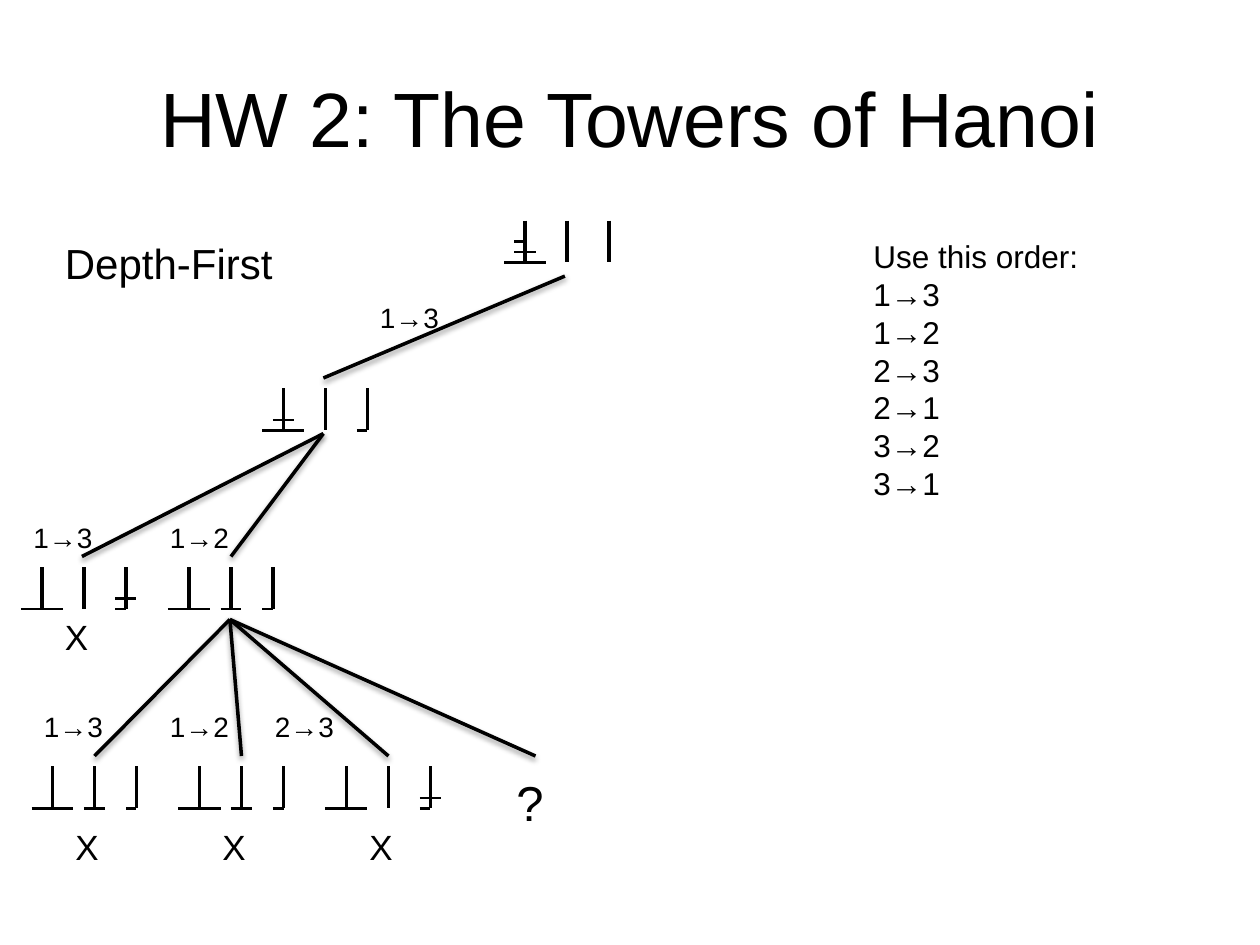
from lxml import etree
from pptx import Presentation
from pptx import util as u
from pptx.dml.color import RGBColor
from pptx.enum import shapes, text
from pptx.oxml import ns

COLORS = {"ink": "000000", "paper": "FFFFFF"}
FONT = "Arial"
UNITS_PER_INCH = 12
WIDE, MEDIUM, SMALL = (-2, 2), (-1, 1), (-1, 0)
MOVES = ["1→3", "1→2", "2→3", "2→1", "3→2", "3→1"]


def grid(units):
    """Turn grid units, twelfths of an inch, into a length."""
    return u.Cm(units * 2.54 / UNITS_PER_INCH)


def add_text(slide, box, lines, size, align=text.PP_ALIGN.LEFT, wrap=False,
             anchor=text.MSO_ANCHOR.TOP, grow=True):
    """Add a text box with one paragraph for each line."""
    frame = slide.shapes.add_textbox(*map(grid, box)).text_frame
    frame.word_wrap = wrap
    frame.vertical_anchor = anchor
    if grow:
        frame.auto_size = text.MSO_AUTO_SIZE.SHAPE_TO_FIT_TEXT
    frame.text = "\n".join(lines)
    for paragraph in frame.paragraphs:
        paragraph.alignment = align
        paragraph.font.name = FONT
        paragraph.font.size = u.Pt(size)
        paragraph.font.color.rgb = RGBColor.from_string(COLORS["ink"])


def add_line(slide, start, end, width, shadow=False):
    """Add a straight line, with a soft shadow below it if asked."""
    line = slide.shapes.add_connector(
        shapes.MSO_CONNECTOR.STRAIGHT, *map(grid, (*start, *end)))
    line.line.width = u.Pt(width)
    line.line.color.rgb = RGBColor.from_string(COLORS["ink"])
    properties = line._element.spPr
    effects = etree.SubElement(properties, ns.qn("a:effectLst"))
    if shadow:
        outer = etree.SubElement(
            effects, ns.qn("a:outerShdw"), blurRad="40000", dist="20000",
            dir="5400000", rotWithShape="0")
        color = etree.SubElement(outer, ns.qn("a:srgbClr"), val=COLORS["ink"])
        etree.SubElement(color, ns.qn("a:alpha"), val="38000")


def add_towers(slide, left, top, pegs, dead_end_drop=None):
    """Draw three pegs with their discs, and an X below a dead end."""
    height = 4
    for index, discs in enumerate(pegs):
        x = left + 2 + 4 * index
        add_line(slide, (x, top), (x, top + height), 2.25)
        for level, (begin, end) in enumerate(discs):
            y = top + height - level
            add_line(slide, (x + begin, y), (x + end, y), 1.5)
    if dead_end_drop is not None:
        box = (left + 3, top + dead_end_drop, 4.7, 5.3)
        add_text(slide, box, ["X"], 20)


def add_branches(slide, start, ends, labels):
    """Draw the branches from one state, with the moves they stand for."""
    for end in ends:
        add_line(slide, start, end, 2, shadow=True)
    for (left, top), move in labels:
        add_text(slide, (left, top, 8.2, 4.4), [move], 16)


def add_search_tree(slide, left, top):
    """Draw the depth-first search tree from its top left corner."""
    split = [[WIDE], [MEDIUM], [SMALL]]
    stacked = [[WIDE], [], [SMALL, MEDIUM]]
    states = [
        (46, 0, [[WIDE, MEDIUM, SMALL], [], []], None),
        (23, 16, [[WIDE, MEDIUM], [], [SMALL]], None),
        (0, 33, stacked, 4),
        (14, 33, split, None),
        (1, 52, split, 5),
        (15, 52, split, 5),
        (29, 52, stacked, 5),
    ]
    branches = [
        ((51.8, 5.3), [(28.8, 15)], [((33, 7), "1→3")]),
        ((28.8, 20.3), [(5.8, 32), (20, 32)],
         [((0, 28), "1→3"), ((13, 28), "1→2")]),
        ((19.9, 38), [(7 + 14 * index, 51) for index in range(4)],
         [((1, 46), "1→3"), ((13, 46), "1→2"), ((23, 46), "2→3")]),
    ]
    for x, y, pegs, drop in states:
        add_towers(slide, left + x, top + y, pegs, drop)
    for (x, y), ends, labels in branches:
        add_branches(
            slide, (left + x, top + y),
            [(left + end_x, top + end_y) for end_x, end_y in ends],
            [((left + label_x, top + label_y), move)
             for (label_x, label_y), move in labels])
    add_text(slide, (left + 46, top + 52, 5, 6.9), ["?"], 28)


def add_headings(slide, left, top):
    """Add the title, the name of the search and the order of moves."""
    add_text(slide, (left, top, 108, 15), ["HW 2: The Towers of Hanoi"], 44,
             align=text.PP_ALIGN.CENTER, wrap=True,
             anchor=text.MSO_ANCHOR.MIDDLE, grow=False)
    add_text(slide, (left - 1, top + 18.4, 22.4, 6.1), ["Depth-First"], 24)
    add_text(slide, (left + 76, top + 18.4, 22, 26.7),
             ["Use this order:", *MOVES], 18, wrap=True)


def main():
    """Build the slide and save it."""
    presentation = Presentation()
    presentation.slide_width = grid(120)
    presentation.slide_height = grid(90)
    slide = presentation.slides.add_slide(presentation.slide_layouts[6])
    background = slide.background.fill
    background.solid()
    background.fore_color.rgb = RGBColor.from_string(COLORS["paper"])
    add_headings(slide, 6, 3.6)
    add_search_tree(slide, 2, 21)
    presentation.save("out.pptx")


if __name__ == "__main__":
    main()
